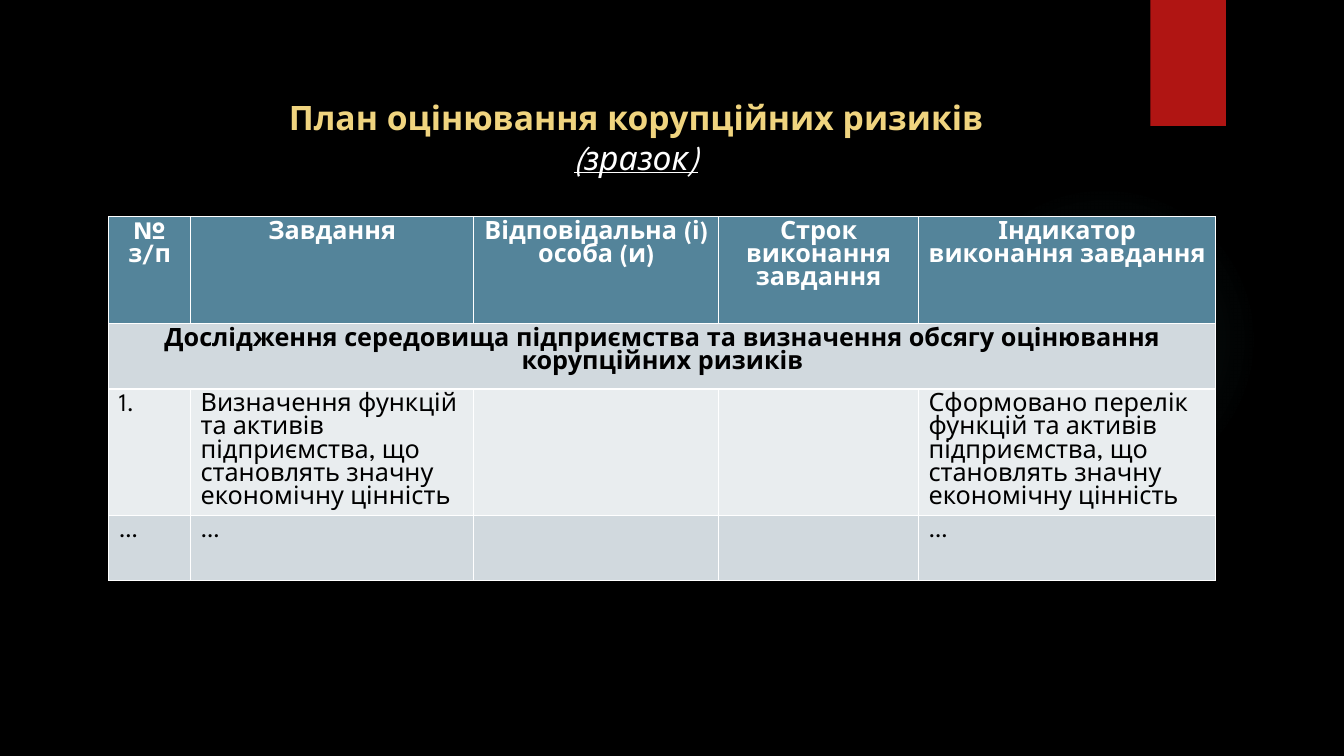
from lxml.etree import SubElement
from pptx import Presentation
from pptx.dml.color import RGBColor
from pptx.enum.shapes import MSO_SHAPE
from pptx.enum.text import MSO_ANCHOR, PP_ALIGN
from pptx.oxml.ns import qn
from pptx.util import Inches, Pt

BLACK = RGBColor(0, 0, 0)
WHITE = RGBColor(255, 255, 255)
GOLD = RGBColor(0xF0, 0xD4, 0x7F)
RED = RGBColor(0xB0, 0x15, 0x13)
STEEL = RGBColor(0x54, 0x84, 0x9A)
MIST = RGBColor(0xD1, 0xD9, 0xDE)
PALE = RGBColor(0xE9, 0xED, 0xEF)
FACE = "League Spartan"

HEADS = ["№ з/п", "Завдання", "Відповідальна (і) особа (и)",
         "Строк виконання завдання", "Індикатор виконання завдання"]
STAGE = ("Дослідження середовища підприємства та визначення обсягу "
         "оцінювання корупційних ризиків")
TASK = ["1.", "Визначення функцій та активів підприємства, що становлять "
        "значну економічну цінність", "", "",
        "Сформовано перелік функцій та активів підприємства, що становлять "
        "значну економічну цінність"]
MORE = ["…", "…", "", "", "…"]
ROWS = [
    (HEADS, STEEL, PP_ALIGN.CENTER, WHITE, True),
    ([STAGE], MIST, PP_ALIGN.CENTER, BLACK, True),
    (TASK, PALE, PP_ALIGN.LEFT, BLACK, False),
    (MORE, MIST, PP_ALIGN.LEFT, BLACK, False),
]


class Page:
    def __init__(self, deck):
        self.slide = deck.slides.add_slide(deck.slide_layouts[5])
        fill = self.slide.background.fill
        fill.solid()
        fill.fore_color.rgb = BLACK

    def style(self, font, color, **form):
        for key, value in {"name": FACE, **form}.items():
            setattr(font, key, value)
        font.color.rgb = color

    def shape(self, kind, box, color):
        item = self.slide.shapes.add_shape(kind, *map(Inches, box))
        item.shadow.inherit = False
        item.fill.solid()
        item.fill.fore_color.rgb = color
        item.line.fill.background()
        return item

    def glow(self, box, color, stops):
        item = self.shape(MSO_SHAPE.OVAL, box, color)
        props = item.fill._xPr
        solid = props.find(qn("a:solidFill"))
        grad = SubElement(props, qn("a:gradFill"))
        props.replace(solid, grad)
        group = SubElement(grad, qn("a:gsLst"))
        for place, alpha in stops:
            stop = SubElement(group, qn("a:gs"), pos=str(place * 1000))
            tint = SubElement(stop, qn("a:srgbClr"), val=str(color))
            SubElement(tint, qn("a:alpha"), val=str(alpha * 1000))
        path = SubElement(grad, qn("a:path"), path="circle")
        SubElement(path, qn("a:fillToRect"),
                   {side: "50000" for side in "ltrb"})

    def title(self, box, head, note):
        item = self.slide.shapes.title
        item.left, item.top, item.width, item.height = map(Inches, box)
        frame = item.text_frame
        frame.word_wrap = True
        frame.vertical_anchor = MSO_ANCHOR.TOP
        para = frame.paragraphs[0]
        para.alignment = PP_ALIGN.CENTER
        self.style(para.font, GOLD, size=Pt(24))
        run = para.add_run()
        run.text = head
        self.style(run.font, GOLD, size=Pt(24), bold=True)
        para.add_line_break()
        run = para.add_run()
        run.text = note
        self.style(run.font, WHITE, size=Pt(24), bold=False,
                   italic=True, underline=True)

    def table(self, box, wide, high, rows):
        grid = self.slide.shapes.add_table(
            len(high), len(wide), *map(Inches, box)).table
        for col, size in zip(grid.columns, wide):
            col.width = Inches(size)
        for row, size in zip(grid.rows, high):
            row.height = Inches(size)
        for r, (texts, fill, align, color, bold) in enumerate(rows):
            if len(texts) == 1:
                grid.cell(r, 0).merge(grid.cell(r, len(wide) - 1))
            for c in range(len(wide)):
                cell = grid.cell(r, c)
                cell.fill.solid()
                cell.fill.fore_color.rgb = fill
                if c < len(texts) and texts[c]:
                    para = cell.text_frame.paragraphs[0]
                    para.alignment = align
                    run = para.add_run()
                    run.text = texts[c]
                    self.style(run.font, color, size=Pt(18), bold=bold)


def main():
    deck = Presentation()
    deck.slide_width, deck.slide_height = Inches(13.33), Inches(7.5)
    page = Page(deck)
    page.glow((9.41, 1.83, 3.08, 3.08), RGBColor(0x50, 0xB9, 0xC1),
              [(0, 7), (36, 6), (69, 0)])
    page.shape(MSO_SHAPE.RECTANGLE, (11.41, 0, 0.75, 1.25), RED)
    page.title((1.08, 0.91, 10.46, 0.39),
               "План оцінювання корупційних ризиків", "(зразок)")
    page.table((1.08, 2.15, 10.98, 3.01), [0.81, 2.81, 2.43, 1.98, 2.95],
               [1.06, 0.65, 0.65, 0.65], ROWS)
    deck.save("out.pptx")


if __name__ == "__main__":
    main()
